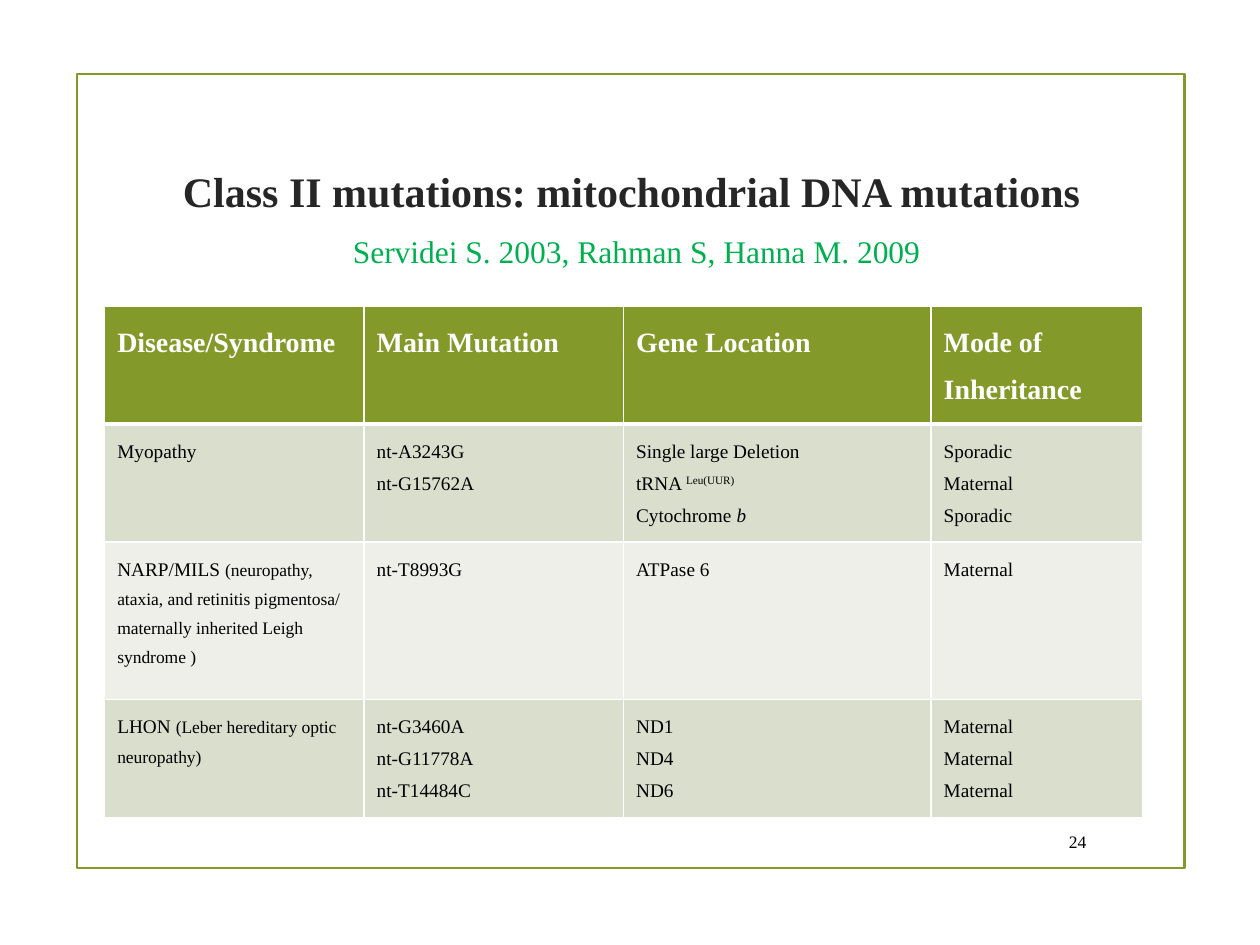
from lxml import etree
from pptx import Presentation
from pptx.dml.color import RGBColor
from pptx.enum.shapes import MSO_SHAPE
from pptx.enum.text import MSO_ANCHOR, MSO_AUTO_SIZE, PP_ALIGN
from pptx.oxml.ns import qn
from pptx.util import Cm, Pt

RECT = MSO_SHAPE.RECTANGLE
MIDDLE = MSO_ANCHOR.MIDDLE
FIXED = MSO_AUTO_SIZE.NONE
CENTER, RIGHT = PP_ALIGN.CENTER, PP_ALIGN.RIGHT

FACE = "Times New Roman"
OLIVE, WHITE, BLACK = "83992A", "FFFFFF", "000000"
BANDS = ["D9DECD", "EDEFE8"]

HEAD = {"size": 16, "bold": True, "color": WHITE}
BODY = {"size": 11, "bold": False, "color": BLACK}
SMALL = {**BODY, "size": 10}
ITALIC = {**BODY, "italic": True}
SUPER = {**BODY, "raised": 30000}
TITLE = {"size": 24, "bold": True, "color": "262626"}
CITE = {"size": 18, "bold": False, "color": "00B050"}

COLS = [5.23, 5.23, 6.2, 4.27]
ROWS = [2.38, 2.38, 3.17, 2.38]
HEADS = ["Disease/Syndrome", "Main Mutation", "Gene Location",
         "Mode of Inheritance"]
# Each cell is a list of lines; a line is plain text or a list of (text, format).
CELLS = [
    [["Myopathy"],
     ["nt-A3243G", "nt-G15762A"],
     ["Single large Deletion",
      [("tRNA ", BODY), ("Leu(UUR)", SUPER)],
      [("Cytochrome ", BODY), ("b", ITALIC)]],
     ["Sporadic", "Maternal", "Sporadic"]],
    [[[("NARP/MILS ", BODY),
       ("(neuropathy, ataxia, and retinitis pigmentosa/", SMALL)],
      [("maternally inherited Leigh syndrome )", SMALL)]],
     ["nt-T8993G"],
     ["ATPase 6"],
     ["Maternal"]],
    [[[("LHON ", BODY), ("(Leber hereditary optic neuropathy)", SMALL)]],
     ["nt-G3460A", "nt-G11778A", "nt-T14484C"],
     ["ND1", "ND4", "ND6"],
     ["Maternal"] * 3],
]


def rgb(code):
    return RGBColor.from_string(code)


def add_run(para, text, form):
    run = para.add_run()
    run.text = text
    font = run.font
    font.name = FACE
    for key, value in form.items():
        if key == "size":
            font.size = Pt(value)
        elif key == "color":
            font.color.rgb = rgb(value)
        elif key == "raised":
            run._r.get_or_add_rPr().set("baseline", str(value))
        else:
            setattr(font, key, value)


def add_lines(frame, lines, form, spacing):
    for i, line in enumerate(lines):
        para = frame.add_paragraph() if i else frame.paragraphs[0]
        para.line_spacing = spacing
        for text, look in [(line, form)] if isinstance(line, str) else line:
            add_run(para, text, look)


def add_border(cell, side, width):
    line = etree.SubElement(cell._tc.get_or_add_tcPr(), qn("a:" + side),
                            w=str(Pt(width)))
    fill = etree.SubElement(line, qn("a:solidFill"))
    etree.SubElement(fill, qn("a:srgbClr"), val=WHITE)


def add_frame(slide, box):
    frame = slide.shapes.add_shape(RECT, *map(Cm, box))
    frame.shadow.inherit = False
    frame.fill.background()
    frame.line.color.rgb = rgb(OLIVE)
    frame.line.width = Pt(1.25)


def set_title(slide, box):
    title = slide.shapes.title
    for key, value in zip(("left", "top", "width", "height"), box):
        setattr(title, key, Cm(value))
    frame = title.text_frame
    for key, value in {"vertical_anchor": MIDDLE, "auto_size": FIXED,
                       "word_wrap": True}.items():
        setattr(frame, key, value)
    para = frame.paragraphs[0]
    para.alignment = CENTER
    para.line_spacing = 1.1
    add_run(para, "Class II mutations: mitochondrial DNA mutations", TITLE)
    para.add_line_break()
    add_run(para, " ", TITLE)
    add_run(para, "Servidei S. 2003, Rahman S, Hanna M. 2009", CITE)


def add_grid(slide, left, top):
    table = slide.shapes.add_table(
        len(ROWS), len(COLS), Cm(left), Cm(top),
        Cm(sum(COLS)), Cm(sum(ROWS))).table
    table.horz_banding = False
    for col, width in zip(table.columns, COLS):
        col.width = Cm(width)
    for row, height in zip(table.rows, ROWS):
        row.height = Cm(height)
    for r, texts in enumerate([[[head] for head in HEADS]] + CELLS):
        for c, lines in enumerate(texts):
            cell = table.cell(r, c)
            for side in ("lnL", "lnR", "lnT", "lnB"):
                thick = (r, side) in ((0, "lnB"), (1, "lnT"))
                add_border(cell, side, 3 if thick else 1)
            cell.fill.solid()
            cell.fill.fore_color.rgb = rgb(BANDS[(r - 1) % 2] if r else OLIVE)
            add_lines(cell.text_frame, lines, BODY if r else HEAD, 1.5)


def add_number(slide, box):
    frame = slide.shapes.add_textbox(*map(Cm, box)).text_frame
    frame.word_wrap = True
    frame.vertical_anchor = MIDDLE
    add_lines(frame, ["24"], SMALL, 1.0)
    frame.paragraphs[0].alignment = RIGHT


def main():
    deck = Presentation()
    deck.slide_width, deck.slide_height = Cm(25.4), Cm(19.05)
    slide = deck.slides.add_slide(deck.slide_layouts[5])
    add_frame(slide, (1.55, 1.5, 22.33, 16))
    set_title(slide, (3.28, 2.54, 18.9, 3.63))
    add_grid(slide, 2.11, 6.17)
    add_number(slide, (21.06, 16.56, 1.09, 0.79))
    deck.save("out.pptx")


if __name__ == "__main__":
    main()
